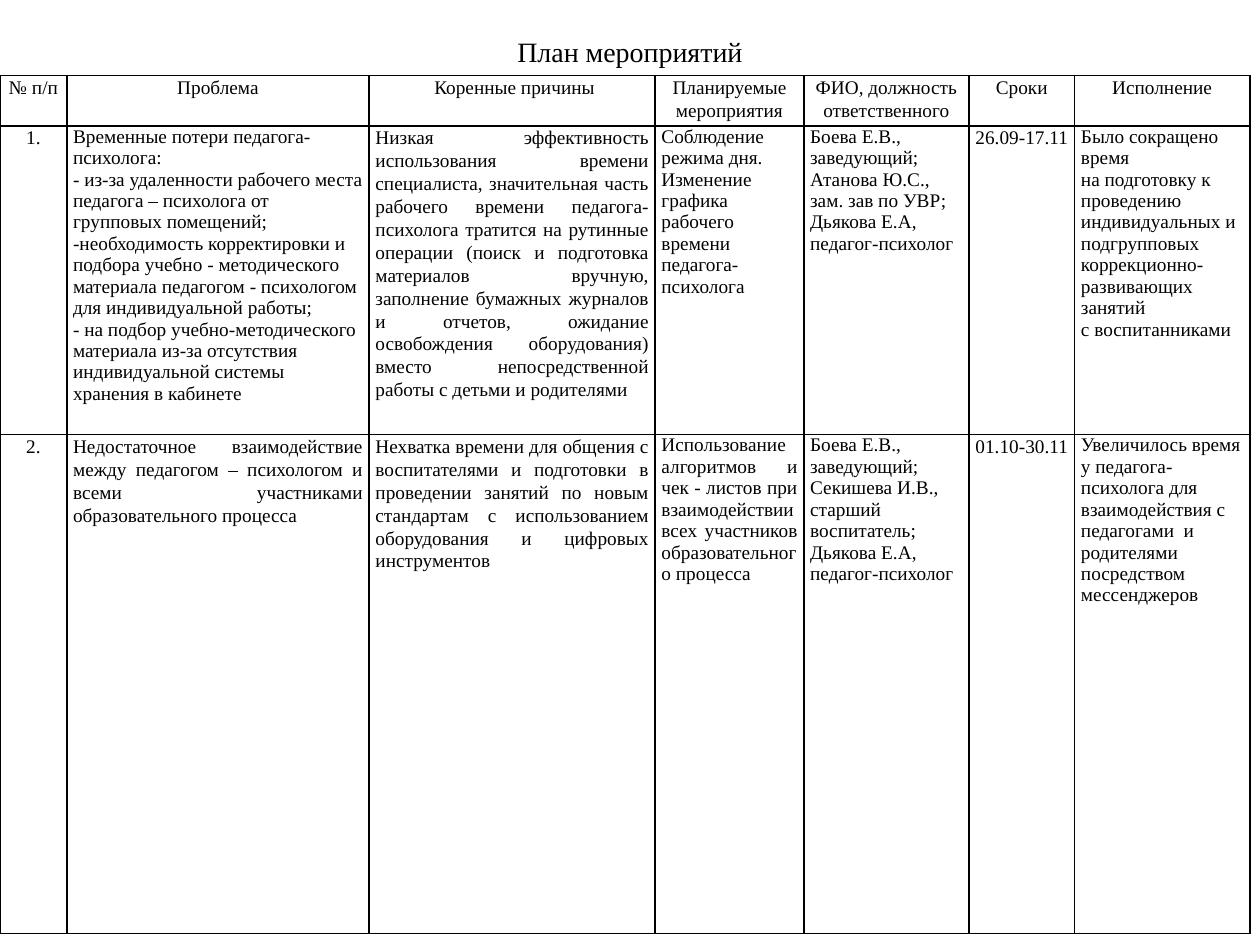
from lxml import etree
from pptx import Presentation
from pptx.dml.color import RGBColor
from pptx.enum.text import MSO_ANCHOR, PP_ALIGN
from pptx.oxml.ns import qn
from pptx.util import Inches, Pt

LEFT, CENTER, JUSTIFY = PP_ALIGN.LEFT, PP_ALIGN.CENTER, PP_ALIGN.JUSTIFY
TOP, MIDDLE = MSO_ANCHOR.TOP, MSO_ANCHOR.MIDDLE
BLACK = RGBColor(0x00, 0x00, 0x00)
FONT = "Times New Roman"
LOOSE = 1.07

# Content: each cell is a list of paragraphs
TITLE = "План мероприятий"
HEADER = [
    ["№ п/п"], ["Проблема"], [" Коренные причины"], ["Планируемые мероприятия"],
    ["ФИО, должность ответственного"], ["Сроки"], ["Исполнение"],
]
TIME_LOSS = [
    ["1."],
    ["Временные потери педагога-психолога:",
     "- из-за удаленности рабочего места педагога – психолога от групповых помещений;",
     "-необходимость корректировки и подбора учебно - методического материала "
     "педагогом - психологом для индивидуальной работы;",
     "- на подбор учебно-методического материала из-за отсутствия "
     "индивидуальной системы хранения в кабинете"],
    ["Низкая эффективность использования времени специалиста, значительная часть "
     "рабочего времени педагога-психолога тратится на рутинные операции (поиск и "
     "подготовка материалов вручную, заполнение бумажных журналов и отчетов, "
     "ожидание освобождения оборудования) вместо непосредственной работы с детьми "
     "и родителями"],
    ["Соблюдение режима дня.", "Изменение графика",
     "рабочего времени педагога-психолога"],
    ["Боева Е.В., заведующий;", "Атанова Ю.С., зам. зав по УВР;",
     "Дьякова Е.А, педагог-психолог"],
    ["26.09-17.11"],
    ["Было сокращено время", "на подготовку к", "проведению", "индивидуальных и",
     "подгрупповых", "коррекционно-", "развивающих занятий", "с воспитанниками"],
]
INTERACTION = [
    ["2."],
    ["Недостаточное взаимодействие между педагогом – психологом и всеми "
     "участниками образовательного процесса"],
    ["Нехватка времени для общения с воспитателями и подготовки в проведении "
     "занятий по новым стандартам с использованием оборудования и цифровых "
     "инструментов"],
    ["Использование алгоритмов и чек - листов при взаимодействии всех участников "
     "образовательного процесса"],
    ["Боева Е.В., заведующий;", "Секишева И.В., старший воспитатель;",
     "Дьякова Е.А, педагог-психолог"],
    ["01.10-30.11"],
    ["Увеличилось время у педагога-психолога для взаимодействия с педагогами  и "
     "родителями посредством мессенджеров"],
]
ROWS = [HEADER, TIME_LOSS, INTERACTION]

# Alignment and line spacing of each column, row by row
C, J, L = (CENTER, LOOSE), (JUSTIFY, LOOSE), (LEFT, None)
FORMATS = [
    [C] * 7,
    [C, L, J, L, L, C, L],
    [C, J, J, (JUSTIFY, None), L, C, L],
]
COL_WIDTHS = [0.53, 2.4, 2.27, 1.18, 1.31, 0.84, 1.39]
ROW_HEIGHTS = [0.4, 2.45, 3.96]


def write(tf, paragraphs, size=11, align=LEFT, spacing=None):
    tf.word_wrap = True
    for i, text in enumerate(paragraphs):
        p = tf.paragraphs[0] if i == 0 else tf.add_paragraph()
        p.alignment = align
        if spacing:
            p.line_spacing = spacing
        r = p.add_run()
        r.text = text
        r.font.name, r.font.size = FONT, Pt(size)
        r.font.color.rgb = BLACK


def add_borders(cell, width=1):
    tc_pr = cell._tc.get_or_add_tcPr()
    for i, side in enumerate(("lnL", "lnR", "lnT", "lnB")):
        ln = etree.Element(qn("a:" + side), w=str(Pt(width)))
        fill = etree.SubElement(ln, qn("a:solidFill"))
        etree.SubElement(fill, qn("a:srgbClr"), val=str(BLACK))
        tc_pr.insert(i, ln)


prs = Presentation()
prs.slide_width, prs.slide_height = Inches(10), Inches(7.5)
s = prs.slides.add_slide(prs.slide_layouts[6])

# Title
title = s.shapes.add_textbox(Inches(0.5), Inches(0.21), Inches(9), Inches(0.39))
title.text_frame.vertical_anchor = MIDDLE
write(title.text_frame, [TITLE], size=16, align=CENTER)

# Table of measures
table = s.shapes.add_table(
    len(ROWS), len(HEADER), Inches(0), Inches(0.6),
    Inches(sum(COL_WIDTHS)), Inches(sum(ROW_HEIGHTS))).table
table.first_row = table.horz_banding = False
for column, width in zip(table.columns, COL_WIDTHS):
    column.width = Inches(width)
for row, height, contents, formats in zip(table.rows, ROW_HEIGHTS, ROWS, FORMATS):
    row.height = Inches(height)
    for cell, paragraphs, (align, spacing) in zip(row.cells, contents, formats):
        cell.margin_left = cell.margin_right = Inches(0.05)
        cell.margin_top = cell.margin_bottom = 0
        cell.vertical_anchor = TOP
        cell.fill.background()
        add_borders(cell)
        write(cell.text_frame, paragraphs, align=align, spacing=spacing)

prs.save("out.pptx")
